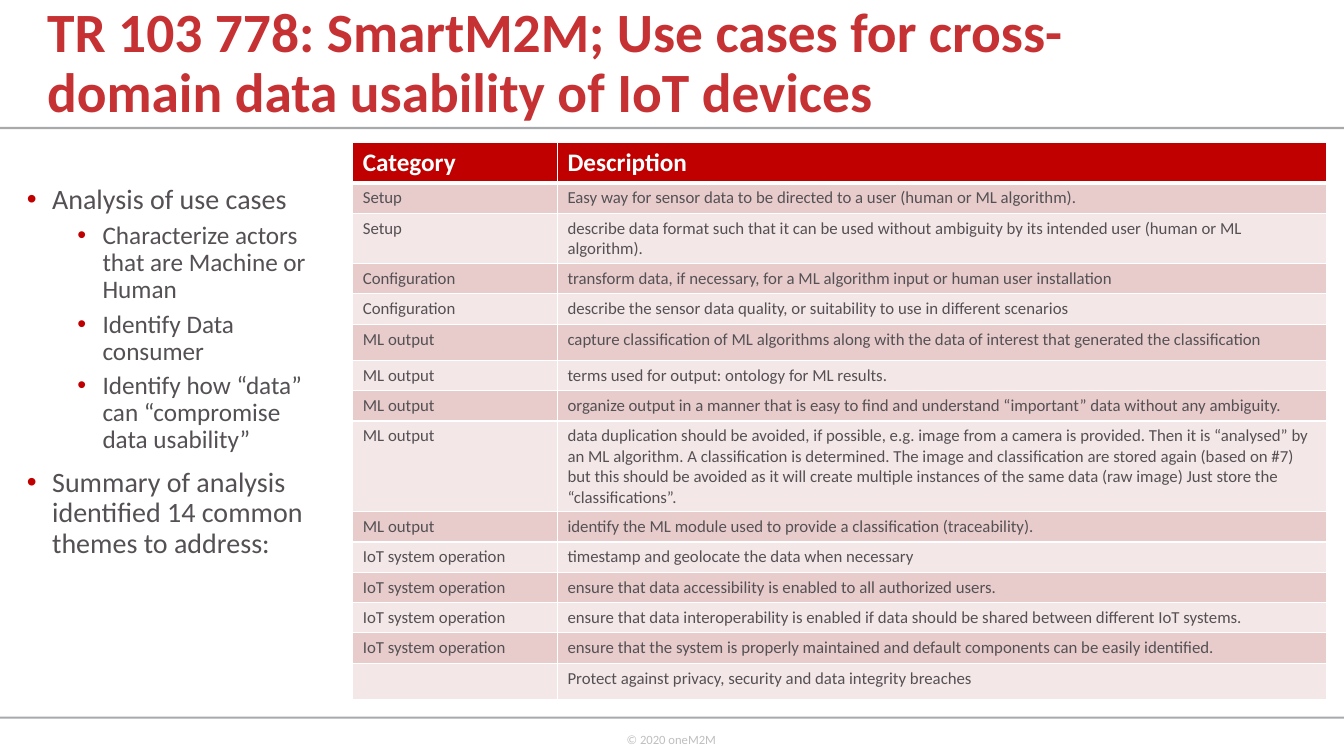
from pptx import Presentation
from pptx.dml.color import RGBColor
from pptx.enum.shapes import MSO_SHAPE
from pptx.enum.text import MSO_ANCHOR
from pptx.util import Pt
from lxml.etree import SubElement
from pptx.oxml.ns import qn

HUES = {
    "title": "C63133", "accent": "C00000", "text": "545054", "rule": "A7A9AC",
    "foot": "BFBFBF", "white": "FFFFFF", "dark": "E8CCCC", "light": "F4E7E7",
}

POINTS = [
    (0, "Analysis of use cases"),
    (1, "Characterize actors that are Machine or Human"),
    (1, "Identify Data consumer"),
    (1, "Identify how “data” can “compromise data usability”"),
    (0, "Summary of analysis identified 14 common themes to address:"),
]

ROWS = [
    ("Category", "Description"),
    ("Setup", "Easy way for sensor data to be directed to a user (human or ML algorithm)."),
    ("Setup", "describe data format such that it can be used without ambiguity by its "
              "intended user (human or ML algorithm)."),
    ("Configuration", "transform data, if necessary, for a ML algorithm input or human "
                      "user installation"),
    ("Configuration", "describe the sensor data quality, or suitability to use in "
                      "different scenarios"),
    ("ML output", "capture classification of ML algorithms along with the data of interest "
                  "that generated the classification"),
    ("ML output", "terms used for output: ontology for ML results."),
    ("ML output", "organize output in a manner that is easy to find and understand "
                  "“important” data without any ambiguity."),
    ("ML output", "data duplication should be avoided, if possible, e.g. image from a camera "
                  "is provided. Then it is “analysed” by an ML algorithm. A classification is "
                  "determined. The image and classification are stored again (based on #7) but "
                  "this should be avoided as it will create multiple instances of the same data "
                  "(raw image) Just store the “classifications”."),
    ("ML output", "identify the ML module used to provide a classification (traceability)."),
    ("IoT system operation", "timestamp and geolocate the data when necessary"),
    ("IoT system operation", "ensure that data accessibility is enabled to all authorized users."),
    ("IoT system operation", "ensure that data interoperability is enabled if data should be "
                             "shared between different IoT systems."),
    ("IoT system operation", "ensure that the system is properly maintained and default "
                             "components can be easily identified."),
    ("", "Protect against privacy, security and data integrity breaches"),
]
TALL = {0: 27.4, 2: 33.6, 5: 25.9, 8: 61, 14: 25.9}


class Deck:
    """Draw styled elements on the current slide."""

    def __init__(self, wide, high, face):
        self.file = Presentation()
        self.file.slide_width, self.file.slide_height = Pt(wide), Pt(high)
        self.wide, self.face = wide, face
        self.slide = self.file.slides.add_slide(self.file.slide_layouts[6])

    def hue(self, name):
        return RGBColor.from_string(HUES[name])

    def style(self, para, size, hue, bold=False):
        font = para.font
        font.name, font.size, font.bold = self.face, Pt(size), bold
        font.color.rgb = self.hue(hue)

    def rule(self, top):
        bar = self.slide.shapes.add_shape(MSO_SHAPE.RECTANGLE, 0, Pt(top), Pt(self.wide), Pt(1.5))
        bar.shadow.inherit = False
        bar.fill.solid()
        bar.fill.fore_color.rgb = self.hue("rule")
        bar.line.fill.background()

    def frame(self, box, wrap=True):
        frame = self.slide.shapes.add_textbox(*map(Pt, box)).text_frame
        frame.word_wrap = wrap
        return frame

    def label(self, box, text, size, hue, bold=False, wrap=True, space=None):
        frame = self.frame(box, wrap)
        frame.vertical_anchor = MSO_ANCHOR.MIDDLE if bold else MSO_ANCHOR.TOP
        para = frame.paragraphs[0]
        para.text, para.line_spacing = text, space
        self.style(para, size, hue, bold)

    def bullets(self, box, points):
        frame = self.frame(box)
        for pos, (level, text) in enumerate(points):
            para = frame.add_paragraph() if pos else frame.paragraphs[0]
            para.text, para.level = text, level
            props = para._p.get_or_add_pPr()
            props.set("marL", str(Pt(18 + 36 * level)))
            props.set("indent", str(Pt(-18)))
            tint = SubElement(props, qn("a:buClr"))
            SubElement(tint, qn("a:srgbClr"), val=HUES["accent"])
            SubElement(props, qn("a:buFont"), typeface="Arial")
            SubElement(props, qn("a:buChar"), char="•")
            para.line_spacing = 0.9
            if pos:
                para.space_before = Pt(10 - 5 * level)
            self.style(para, 20 - 2 * level, "text")

    def border(self, cell, row):
        props = cell._tc.get_or_add_tcPr()
        for side in "LRTB":
            thick = (row, side) in ((0, "B"), (1, "T"))
            line = SubElement(props, qn("a:ln" + side), w=str(Pt(3 if thick else 1)))
            fill = SubElement(line, qn("a:solidFill"))
            SubElement(fill, qn("a:srgbClr"), val=HUES["white"])

    def table(self, left, top, cols, rows, tall, base):
        highs = [tall.get(row, base) for row in range(len(rows))]
        grid = self.slide.shapes.add_table(
            len(rows), len(cols), Pt(left), Pt(top), Pt(sum(cols)), Pt(sum(highs))).table
        for col, wide in zip(grid.columns, cols):
            col.width = Pt(wide)
        for row, texts in enumerate(rows):
            grid.rows[row].height = Pt(highs[row])
            head = row == 0
            fill = "accent" if head else ("light", "dark")[row % 2]
            for col, text in enumerate(texts):
                cell = grid.cell(row, col)
                self.border(cell, row)
                cell.fill.solid()
                cell.fill.fore_color.rgb = self.hue(fill)
                para = cell.text_frame.paragraphs[0]
                para.text = text
                self.style(para, 18 if head else 12, "white" if head else "text", head)


def main():
    deck = Deck(960, 540, "Calibri")
    for top in (90.7, 511.9):
        deck.rule(top)
    deck.label((440.6, 519, 80.6, 28.8), "© 2020 oneM2M", 9, "foot", wrap=False)
    deck.label((26.6, 0, 806.4, 92.2),
               "TR 103 778: SmartM2M; Use cases for cross-domain data usability of IoT devices",
               39.6, "title", bold=True, space=0.9)
    deck.bullets((12.2, 128.9, 225.4, 342.7), POINTS)
    deck.table(252, 101.8, (146.2, 549.4), ROWS, TALL, 20.2)
    deck.file.save("out.pptx")


if __name__ == "__main__":
    main()
